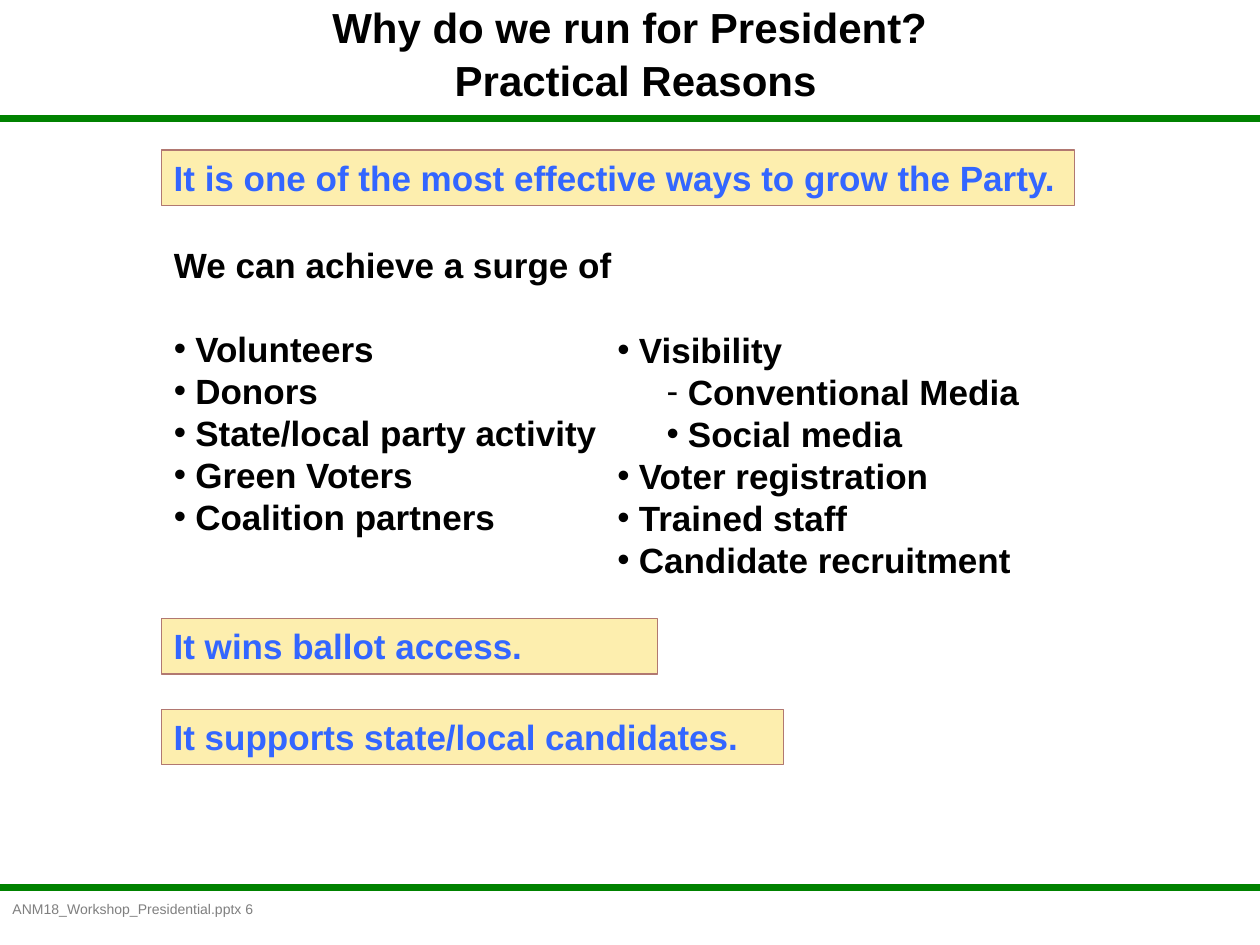
import lxml.etree
import pptx
import pptx.dml.color
import pptx.enum.shapes
import pptx.enum.text
import pptx.oxml.ns
import pptx.util

Inches = pptx.util.Inches
Pt = pptx.util.Pt
FONT = "Arial"
BULLET_INDENT = 0.17
SUBLEVEL_INDENT = 0.39
LEFT_EDGE = 1.28


def color(hex_string):
    """Return the colour for a hex string."""
    return pptx.dml.color.RGBColor.from_string(hex_string)


def add_xml(parent, tag, **attributes):
    """Append a DrawingML element to a parent element."""
    return lxml.etree.SubElement(parent, pptx.oxml.ns.qn(tag), **attributes)


def place(shape, left, top, width, height):
    """Move and size a shape, in inches."""
    shape.left, shape.top = Inches(left), Inches(top)
    shape.width, shape.height = Inches(width), Inches(height)


def write(paragraph, text, size=20, bold=True, fill="000000", spacing=Pt(24),
          before=0, align=pptx.enum.text.PP_ALIGN.LEFT):
    """Write formatted text into a paragraph."""
    paragraph.text = text
    paragraph.alignment = align
    paragraph.line_spacing = spacing
    paragraph.space_before = Pt(before)
    for run in paragraph.runs:
        run.font.name = FONT
        run.font.size = Pt(size)
        run.font.bold = bold
        run.font.color.rgb = color(fill)


def set_bullet(paragraph, character=None):
    """Give a paragraph a hanging bullet, or none."""
    properties = paragraph._p.get_or_add_pPr()
    hanging = BULLET_INDENT if character else 0
    margin = hanging + paragraph.level * SUBLEVEL_INDENT
    properties.set("marL", str(Inches(margin)))
    properties.set("indent", str(-Inches(hanging)))
    if character:
        add_xml(properties, "a:buFont", typeface=FONT)
        add_xml(properties, "a:buChar", char=character)
    else:
        add_xml(properties, "a:buNone")


def fill_title(shape, text):
    """Place and write the slide title."""
    place(shape, 1.17, 0, 7.75, 0.83)
    frame = shape.text_frame
    frame.auto_size = pptx.enum.text.MSO_AUTO_SIZE.NONE
    frame.vertical_anchor = pptx.enum.text.MSO_ANCHOR.MIDDLE
    write(frame.paragraphs[0], text, size=24, spacing=Pt(30),
          align=pptx.enum.text.PP_ALIGN.CENTER)


def fill_list(shape, box, items):
    """Place a body placeholder and write (bullet, level, text, gap) items."""
    place(shape, *box)
    frame = shape.text_frame
    frame.auto_size = pptx.enum.text.MSO_AUTO_SIZE.NONE
    for index, (bullet, level, text, before) in enumerate(items):
        paragraph = frame.add_paragraph() if index else frame.paragraphs[0]
        paragraph.level = level
        write(paragraph, text, before=before)
        set_bullet(paragraph, bullet)


def add_callout(slide, text, top, width):
    """Add a highlighted statement box."""
    shape = slide.shapes.add_shape(
        pptx.enum.shapes.MSO_SHAPE.RECTANGLE,
        Inches(LEFT_EDGE), Inches(top), Inches(width), Inches(0.44))
    shape.shadow.inherit = False
    shape.fill.solid()
    shape.fill.fore_color.rgb = color("FDEEAE")
    shape.line.color.rgb = color("B17871")
    shape.line.width = Pt(0.75)
    shape.text_frame.word_wrap = True
    shape.text_frame.vertical_anchor = pptx.enum.text.MSO_ANCHOR.TOP
    write(shape.text_frame.paragraphs[0], text, fill="3366FF")


def add_rule(slide, top):
    """Add a green line across the slide."""
    line = slide.shapes.add_connector(
        pptx.enum.shapes.MSO_CONNECTOR.STRAIGHT,
        Inches(0), Inches(top), Inches(10), Inches(top))
    line.line.color.rgb = color("008200")
    line.line.width = Pt(4)
    add_xml(line._element.spPr, "a:effectLst")


def add_footer(slide, text):
    """Add the small footer text."""
    box = slide.shapes.add_textbox(
        Inches(0), Inches(7.11), Inches(2.21), Inches(0.22))
    box.text_frame.word_wrap = False
    write(box.text_frame.paragraphs[0], text, size=8, bold=False,
          fill="7F7F7F", spacing=0.9)


def main():
    """Build and save the slide."""
    presentation = pptx.Presentation()
    presentation.slide_width = Inches(10)
    presentation.slide_height = Inches(7.5)
    slide = presentation.slides.add_slide(presentation.slide_layouts[3])
    title, left_list, right_list = slide.placeholders

    for top in (0.94, 7.04):
        add_rule(slide, top)
    add_footer(slide, "ANM18_Workshop_Presidential.pptx 6")
    fill_title(title, "Why do we run for President? \vPractical Reasons")
    fill_list(left_list, (LEFT_EDGE, 1.88, 4.83, 2.46), [
        (None, 0, "We can achieve a surge of", 0),
        ("•", 0, "Volunteers", 24),
        ("•", 0, "Donors", 0),
        ("•", 0, "State/local party activity", 0),
        ("•", 0, "Green Voters", 0),
        ("•", 0, "Coalition partners", 0),
    ])
    fill_list(right_list, (4.8, 2.56, 3.63, 2.12), [
        ("•", 0, "Visibility", 0),
        ("-", 1, "Conventional Media", 0),
        ("•", 1, "Social media", 0),
        ("•", 0, "Voter registration", 0),
        ("•", 0, "Trained staff", 0),
        ("•", 0, "Candidate recruitment", 0),
    ])
    for text, top, width in (
        ("It is one of the most effective ways to grow the Party.", 1.19, 7.25),
        ("It wins ballot access.", 4.91, 3.94),
        ("It supports state/local candidates.", 5.63, 4.94),
    ):
        add_callout(slide, text, top, width)
    presentation.save("out.pptx")


if __name__ == "__main__":
    main()
